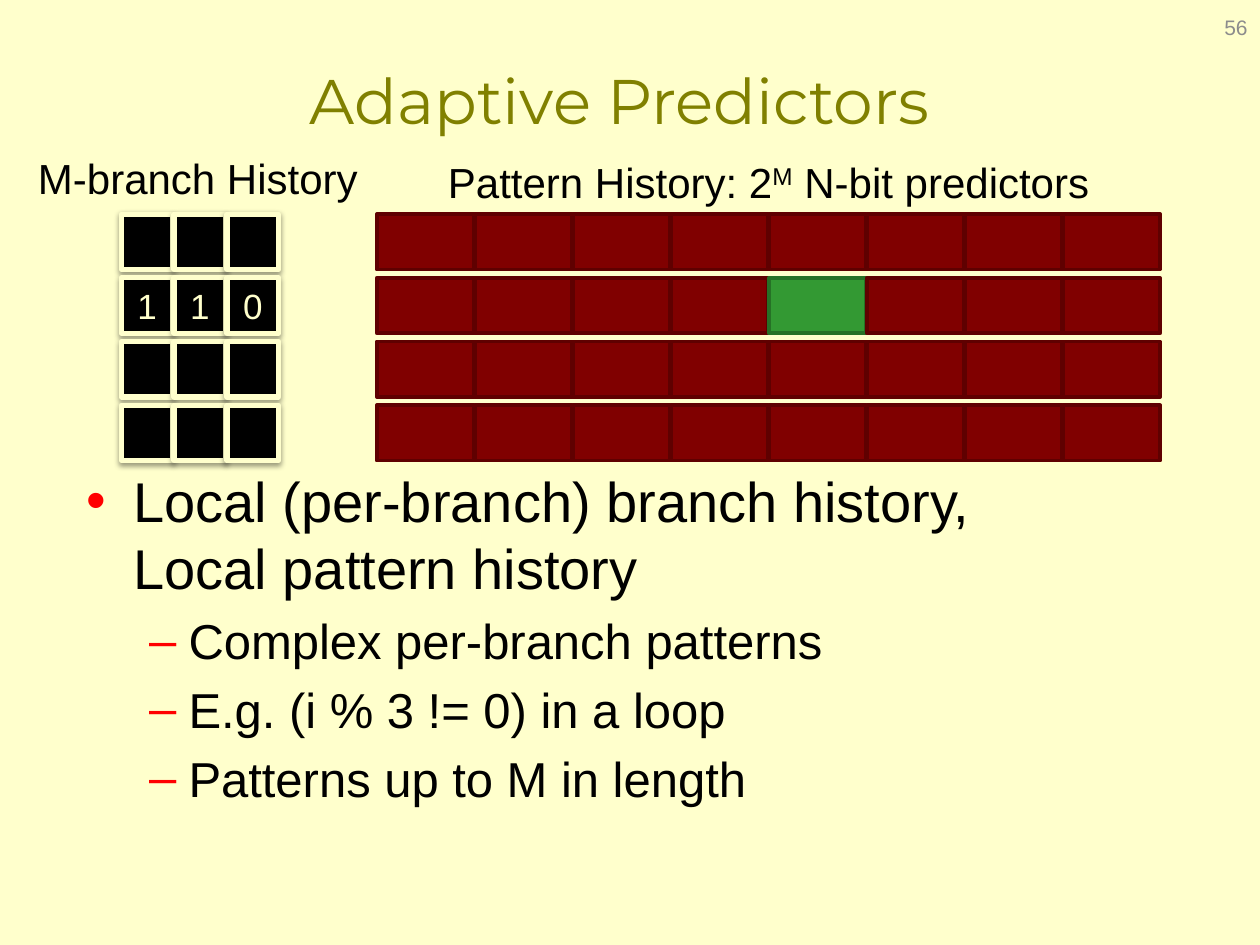
import pptx
import pptx.util
import pptx.dml.color
import pptx.enum.shapes
import pptx.enum.text
import pptx.oxml
from lxml import etree

Pt = pptx.util.Pt
Align = pptx.enum.text.PP_ALIGN
Anchor = pptx.enum.text.MSO_ANCHOR
RECT = pptx.enum.shapes.MSO_SHAPE.RECTANGLE
DRAW = "http://schemas.openxmlformats.org/drawingml/2006/main"

CREAM, BLACK, RED = "FFFFCC", "000000", "FF0000"
ROWS, ROW_STEP, CELL_H = 4, 36.4, 31.7


def color(text):
    return pptx.dml.color.RGBColor.from_string(text)


def node(parent, tag, **attrs):
    return etree.SubElement(parent, f"{{{DRAW}}}{tag}", attrs)


def place(shape, box):
    shape.left, shape.top, shape.width, shape.height = map(Pt, box)


def style(para, size, tint, align=None, face="Arial"):
    para.font.size = Pt(size)
    para.font.name = face
    para.font.color.rgb = color(tint)
    para.alignment = align


def add_title(slide, box, text):
    title = slide.shapes.title
    place(title, box)
    title.text_frame.text = text
    title.text_frame.vertical_anchor = Anchor.MIDDLE
    style(title.text_frame.paragraphs[0], 36, "808000", Align.CENTER, "Montserrat")


def add_list(slide, box, items):
    body = slide.placeholders[1]
    place(body, box)
    frame = body.text_frame
    frame.auto_size = pptx.enum.text.MSO_AUTO_SIZE.NONE
    for num, (level, text) in enumerate(items):
        para = frame.paragraphs[0] if num == 0 else frame.add_paragraph()
        para.text = text
        para.level = level
        style(para, 28 if level else 32, BLACK)
        # Bullet colour comes before the other paragraph parts
        props = para._p.get_or_add_pPr()
        tint = pptx.oxml.parse_xml(f'<a:buClr xmlns:a="{DRAW}"/>')
        node(tint, "srgbClr", val=RED)
        props.insert(0, tint)


def add_label(slide, box, parts, size=24, tint=BLACK, align=Align.CENTER):
    """Parts alternate between plain text and superscript."""
    label = slide.shapes.add_textbox(*map(Pt, box))
    frame = label.text_frame
    frame.word_wrap = True
    para = frame.paragraphs[0]
    style(para, size, tint, align)
    for num, part in enumerate(parts):
        run = para.add_run()
        run.text = part
        if num % 2:
            run._r.get_or_add_rPr().set("baseline", "30000")
    return label


def add_cell(group, box, fill, line, weight):
    cell = group.shapes.add_shape(RECT, *map(Pt, box))
    cell.shadow.inherit = False
    cell.fill.solid()
    cell.fill.fore_color.rgb = color(fill)
    cell.line.color.rgb = color(line)
    cell.line.width = Pt(weight)
    return cell


def add_shadow(cell):
    effects = cell._element.spPr.find(f"{{{DRAW}}}effectLst")
    outer = node(effects, "outerShdw", blurRad=str(Pt(3.1)), dist=str(Pt(1.6)),
                 dir="5400000", rotWithShape="0")
    node(node(outer, "srgbClr", val=BLACK), "alpha", val="38000")


def add_patterns(slide, left, top, active):
    """Eight predictors per branch; the active (row, column) is green."""
    for row in range(ROWS):
        group = slide.shapes.add_group_shape()
        for col in range(8):
            box = (left + 56 * col, top + ROW_STEP * row, 55.7, CELL_H)
            fill, line = (("339933", "267126") if (row, col) == active
                          else ("800000", "5F0000"))
            add_cell(group, box, fill, line, 2)


def add_history(slide, left, top, active, bits):
    """Three history bits per branch, shown for the active row."""
    for row in range(ROWS):
        group = slide.shapes.add_group_shape()
        for col, bit in enumerate(bits):
            box = (left + 30.2 * col, top + ROW_STEP * row, 29.5, CELL_H)
            cell = add_cell(group, box, BLACK, CREAM, 3)
            add_shadow(cell)
            if row == active:
                frame = cell.text_frame
                frame.text = bit
                frame.vertical_anchor = Anchor.MIDDLE
                style(frame.paragraphs[0], 20, CREAM, Align.CENTER)


def main():
    deck = pptx.Presentation()
    deck.slide_width, deck.slide_height = Pt(720), Pt(540)
    slide = deck.slides.add_slide(deck.slide_layouts[1])
    slide.background.fill.solid()
    slide.background.fill.fore_color.rgb = color(CREAM)

    # Title and list
    add_title(slide, (42, 12, 624, 90), "Adaptive Predictors")
    add_list(slide, (42, 263, 624, 253), [
        (0, "Local (per-branch) branch history, \vLocal pattern history"),
        (1, "Complex per-branch patterns"),
        (1, "E.g. (i % 3 != 0) in a loop"),
        (1, "Patterns up to M in length"),
    ])

    # Slide number
    number = add_label(slide, (552, 1, 168, 28.8), ["56"], 12, "8C8C8C", Align.RIGHT)
    number.text_frame.vertical_anchor = Anchor.MIDDLE

    # Headings and tables of cells
    add_label(slide, (13.7, 83.5, 198.7, 36), ["M-branch History"])
    add_label(slide, (215.3, 85.7, 447.8, 36),
              ["Pattern History: 2", "M", " N-bit predictors"])
    add_patterns(slide, 215.3, 122.4, (1, 4))
    add_history(slide, 69.3, 122.4, 1, "110")

    deck.save("out.pptx")


if __name__ == "__main__":
    main()
